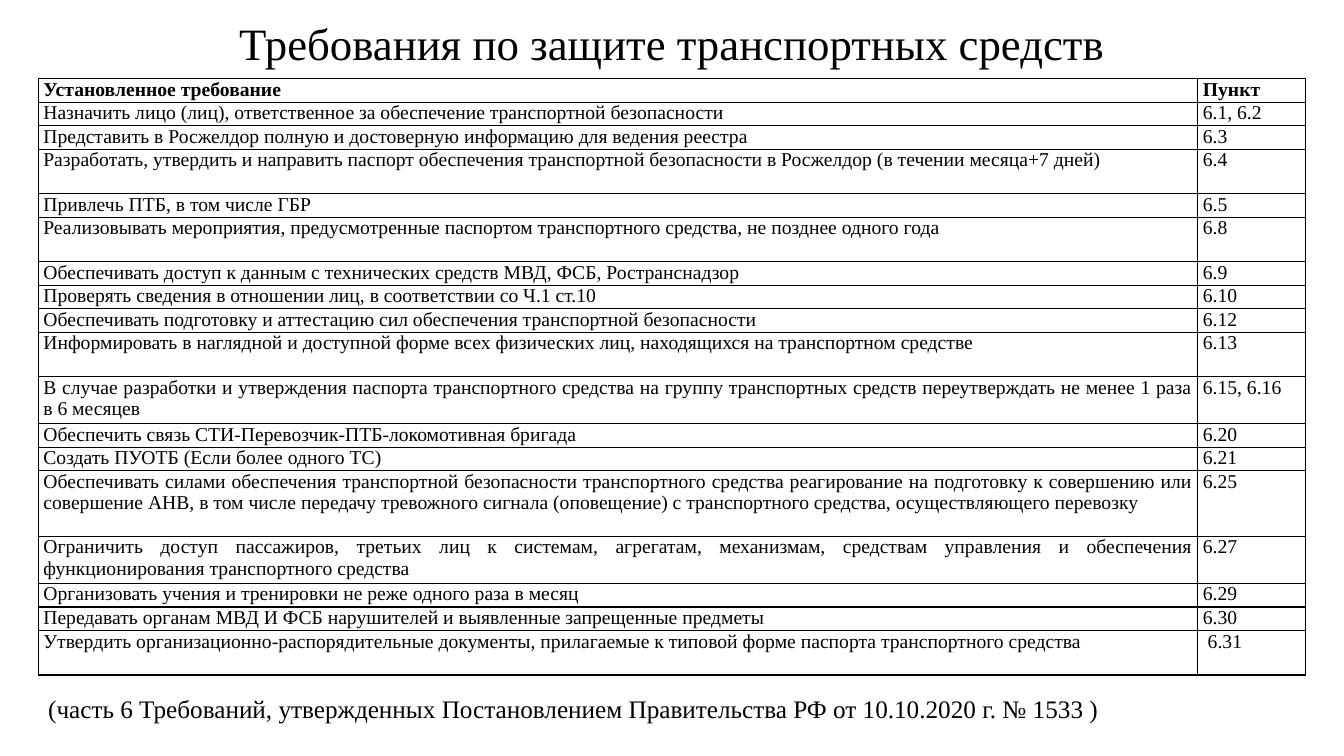
from lxml.etree import SubElement
from pptx import Presentation
from pptx.dml.color import RGBColor
from pptx.enum.text import MSO_ANCHOR as Anchor, MSO_AUTO_SIZE as AutoSize, PP_ALIGN as Align
from pptx.oxml.ns import qn
from pptx.util import Inches, Pt

REQUIREMENTS = [
    ("Установленное требование", "Пункт", 1),
    ("Назначить лицо (лиц), ответственное за обеспечение транспортной безопасности", "6.1, 6.2", 1),
    ("Представить в Росжелдор полную и достоверную информацию для ведения реестра", "6.3", 1),
    ("Разработать, утвердить и направить паспорт обеспечения транспортной безопасности "
     "в Росжелдор (в течении месяца+7 дней)", "6.4", 2),
    ("Привлечь ПТБ, в том числе ГБР", "6.5", 1),
    ("Реализовывать мероприятия, предусмотренные паспортом транспортного средства, "
     "не позднее одного года", "6.8", 2),
    ("Обеспечивать доступ к данным с технических средств МВД, ФСБ, Ространснадзор", "6.9", 1),
    ("Проверять сведения в отношении лиц, в соответствии со Ч.1 ст.10", "6.10", 1),
    ("Обеспечивать подготовку и аттестацию сил обеспечения транспортной безопасности", "6.12", 1),
    ("Информировать в наглядной и доступной форме всех физических лиц, "
     "находящихся на транспортном средстве", "6.13", 2),
    ("В случае разработки и утверждения паспорта транспортного средства на группу "
     "транспортных средств переутверждать не менее 1 раза в 6 месяцев", "6.15, 6.16", 2),
    ("Обеспечить связь СТИ-Перевозчик-ПТБ-локомотивная бригада", "6.20", 1),
    ("Создать ПУОТБ (Если более одного ТС)", "6.21", 1),
    ("Обеспечивать силами обеспечения транспортной безопасности транспортного средства "
     "реагирование на подготовку к совершению или совершение АНВ, в том числе передачу "
     "тревожного сигнала (оповещение) с транспортного средства, осуществляющего перевозку", "6.25", 3),
    ("Ограничить доступ пассажиров, третьих лиц к системам, агрегатам, механизмам, средствам "
     "управления и обеспечения функционирования транспортного средства", "6.27", 2),
    ("Организовать учения и тренировки не реже одного раза в месяц", "6.29", 1),
    ("Передавать органам МВД И ФСБ нарушителей и выявленные запрещенные предметы", "6.30", 1),
    ("Утвердить организационно-распорядительные документы, прилагаемые к типовой форме "
     "паспорта транспортного средства", " 6.31", 2),
]
ROW_HEIGHTS = {1: 0.22, 2: 0.44, 3: 0.65}


def rgb(value):
    """Turn a hex string into a colour."""
    return RGBColor.from_string(value)


def write(tf, text, size=14, font="Times New Roman", color="000000", bold=False,
          align=Align.JUSTIFY, spacing=None):
    """Put one formatted paragraph into a text frame."""
    p = tf.paragraphs[0]
    p.alignment = align
    p.line_spacing = spacing
    r = p.add_run()
    r.text = text
    r.font.size = Pt(size)
    r.font.name = font
    r.font.bold = bold
    r.font.color.rgb = rgb(color)


class SlideBuilder:
    """Hold the style and the current slide."""

    ink = "000000"
    border = 1
    inset = 0.05

    def __init__(self, prs):
        """Add a title-only slide."""
        self.s = prs.slides.add_slide(prs.slide_layouts[5])

    def title(self, text, x, y, w, h):
        """Place and fill the title placeholder."""
        sp = self.s.shapes.title
        sp.left, sp.top, sp.width, sp.height = map(Inches, (x, y, w, h))
        tf = sp.text_frame
        tf.auto_size = AutoSize.NONE
        tf.vertical_anchor = Anchor.MIDDLE
        write(tf, text, size=32, color=self.ink, align=Align.CENTER, spacing=0.9)

    def note(self, text, x, y, w, h):
        """Add a wrapped text box."""
        tf = self.s.shapes.add_textbox(*map(Inches, (x, y, w, h))).text_frame
        tf.word_wrap = True
        tf.auto_size = AutoSize.SHAPE_TO_FIT_TEXT
        write(tf, text, size=18, color=self.ink)

    def outline(self, cell):
        """Draw all four borders of a cell."""
        props = cell._tc.get_or_add_tcPr()
        for side in ("a:lnL", "a:lnR", "a:lnT", "a:lnB"):
            ln = SubElement(props, qn(side), w=str(Pt(self.border)))
            SubElement(SubElement(ln, qn("a:solidFill")), qn("a:srgbClr"), val=self.ink)

    def table(self, rows, x, y, widths):
        """Add a bordered table whose first row is bold."""
        heights = [ROW_HEIGHTS[lines] for *_, lines in rows]
        frame = self.s.shapes.add_table(len(rows), len(widths), Inches(x), Inches(y),
                                        Inches(sum(widths)), Inches(sum(heights)))
        table = frame.table
        table.first_row = table.horz_banding = False
        for column, width in zip(table.columns, widths):
            column.width = Inches(width)
        for i, (*texts, _) in enumerate(rows):
            table.rows[i].height = Inches(heights[i])
            for j, text in enumerate(texts):
                cell = table.cell(i, j)
                cell.margin_left = cell.margin_right = Inches(self.inset)
                cell.margin_top = cell.margin_bottom = 0
                self.outline(cell)
                cell.fill.background()
                write(cell.text_frame, text, color=self.ink, bold=i == 0)


def main():
    """Build and save the slide."""
    prs = Presentation()
    prs.slide_width, prs.slide_height = Inches(13.33), Inches(7.5)
    slide = SlideBuilder(prs)
    slide.title("Требования по защите транспортных средств", 0, 0, 13.33, 0.92)
    slide.note("(часть 6 Требований, утвержденных Постановлением Правительства РФ "
               "от 10.10.2020 г. № 1533 )", 0.38, 6.83, 12.57, 0.4)
    slide.table(REQUIREMENTS, 0.38, 0.78, (11.5, 1.07))
    prs.save("out.pptx")


if __name__ == "__main__":
    main()
